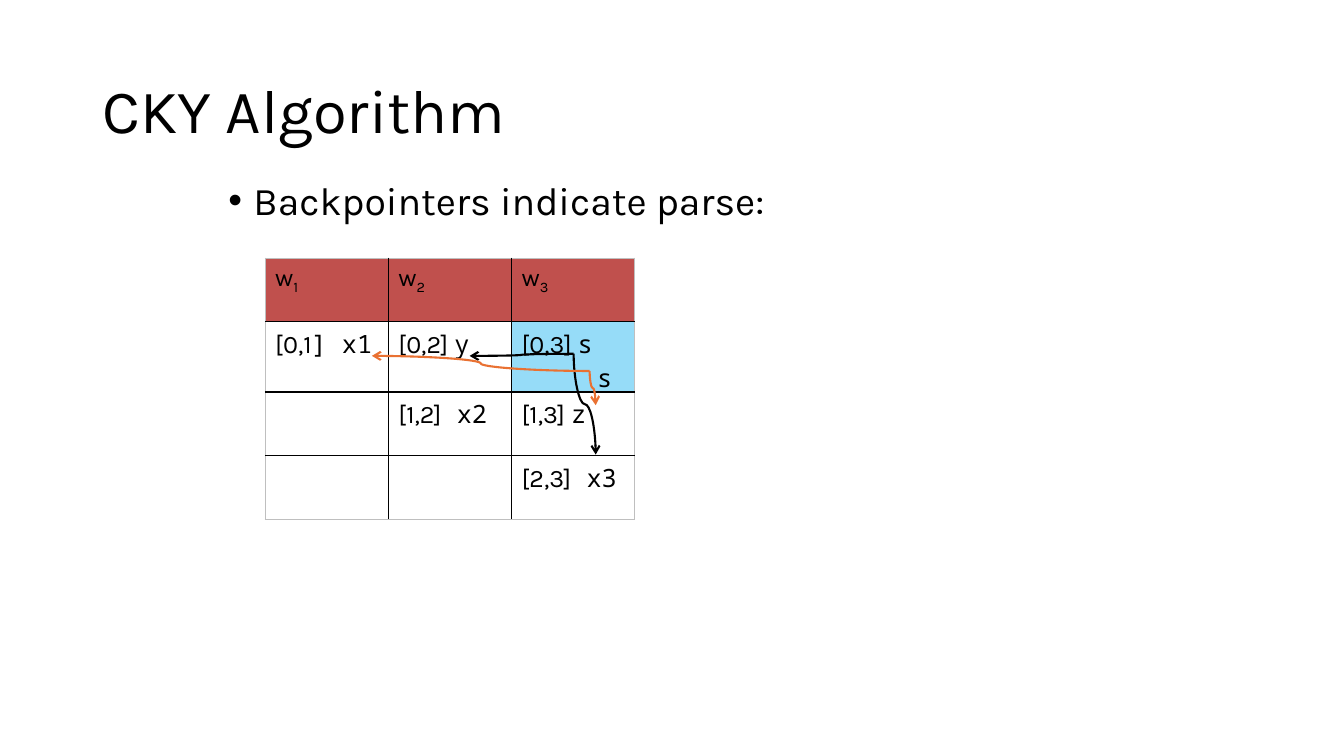
from dataclasses import dataclass

from lxml.etree import SubElement
from pptx import Presentation
from pptx.dml.color import RGBColor
from pptx.enum.shapes import MSO_CONNECTOR
from pptx.enum.text import MSO_ANCHOR
from pptx.oxml.ns import qn
from pptx.util import Pt


@dataclass(frozen=True)
class Theme:
    ink: str = "000000"
    paper: str = "FFFFFF"
    header: str = "C0504D"
    goal: str = "96DCF8"
    second_parse: str = "E97132"
    edge: str = "BFBFBF"
    sans: str = "Karla"
    mono: str = "Noto Sans Mono"
    title: int = 44
    body: int = 28
    cell: int = 18


THEME = Theme()

# Each cell holds a span or word in sans, then its symbols in mono.
CHART = [
    [("[0,1", "] x1"), ("[0,2] ", "y"), ("[0,3] ", "s")],
    [None, ("[1,2]", " x2"), ("[1,3] ", "z")],
    [None, None, ("[2,3]", " x3")],
]
TABLE_LEFT, TABLE_TOP, COL_WIDTH, ROW_HEIGHT = 189.36, 184.3, 88, 45.3

FIRST_S, SECOND_S = (409.7, 252.7), (421.2, 265)
# start, end, colour, whether the curve leaves its start vertically
BACKPOINTERS = [
    (FIRST_S, (335.5, 254.2), THEME.ink, False),
    (FIRST_S, (425.5, 324.7), THEME.ink, True),
    (SECOND_S, (265.7, 254.2), THEME.second_parse, False),
    (SECOND_S, (425.5, 289.4), THEME.second_parse, True),
]


def rgb(value):
    return RGBColor.from_string(value)


def add_text(p, text, size=THEME.cell, font=THEME.sans, color=THEME.ink, baseline=None):
    r = p.add_run()
    r.text = text
    r.font.size = Pt(size)
    r.font.name = font
    r.font.color.rgb = rgb(color)
    if baseline:
        r.font._element.set("baseline", str(baseline * 1000))
    return r


def indent(p, left, first=0):
    pPr = p._p.get_or_add_pPr()
    pPr.set("marL", str(Pt(left)))
    pPr.set("indent", str(Pt(first)))
    return pPr


def add_text_box(s, left, top, width, height, anchor=MSO_ANCHOR.TOP):
    """Return the first paragraph of a new wrapping text box."""
    tf = s.shapes.add_textbox(Pt(left), Pt(top), Pt(width), Pt(height)).text_frame
    tf.word_wrap = True
    tf.vertical_anchor = anchor
    p = tf.paragraphs[0]
    p.line_spacing = 0.9
    return p


def add_title(s, text):
    p = add_text_box(s, 66, 28.8, 828, 104.4, MSO_ANCHOR.MIDDLE)
    add_text(p, text, size=THEME.title)


def add_bullet(s, text):
    p = add_text_box(s, 156, 126, 648, 53.3)
    p.space_before = Pt(10)
    pPr = indent(p, 18, -18)
    SubElement(pPr, qn("a:buFont"), typeface="Arial")
    SubElement(pPr, qn("a:buChar"), char="•")
    add_text(p, text, size=THEME.body)


def set_borders(cell, outer_sides):
    """Draw grey lines on the table's outer sides and black ones elsewhere."""
    tcPr = cell._tc.get_or_add_tcPr()
    for i, side in enumerate("LRTB"):
        outer = side in outer_sides
        ln = tcPr.makeelement(qn(f"a:ln{side}"), {"w": str(Pt(0.5 if outer else 1))})
        fill = SubElement(ln, qn("a:solidFill"))
        SubElement(fill, qn("a:srgbClr"), val=THEME.edge if outer else THEME.ink)
        tcPr.insert(i, ln)


def fill_cell(cell, color):
    cell.fill.solid()
    cell.fill.fore_color.rgb = rgb(color)


def add_chart_table(s):
    rows, cols = len(CHART) + 1, len(CHART[0])
    frame = s.shapes.add_table(rows, cols, Pt(TABLE_LEFT), Pt(TABLE_TOP),
                               Pt(cols * COL_WIDTH), Pt(rows * ROW_HEIGHT))
    table = frame.table
    table.first_row = table.horz_banding = False
    for col in table.columns:
        col.width = Pt(COL_WIDTH)
    for row in table.rows:
        row.height = Pt(ROW_HEIGHT)

    for j in range(cols):
        cell = table.cell(0, j)
        p = cell.text_frame.paragraphs[0]
        add_text(p, "w")
        add_text(p, str(j + 1), baseline=-25)
        fill_cell(cell, THEME.header)

    for i, entries in enumerate(CHART, start=1):
        for j, entry in enumerate(entries):
            cell = table.cell(i, j)
            fill_cell(cell, THEME.paper)
            if entry:
                span, symbol = entry
                p = cell.text_frame.paragraphs[0]
                add_text(p, span)
                add_text(p, symbol, font=THEME.mono)

    goal = table.cell(1, cols - 1)
    fill_cell(goal, THEME.goal)
    p = goal.text_frame.add_paragraph()
    indent(p, 54)
    add_text(p, "s", font=THEME.mono)

    for i in range(rows):
        for j in range(cols):
            sides = {"L": j == 0, "R": j == cols - 1, "T": i == 0, "B": i == rows - 1}
            set_borders(table.cell(i, j), [side for side, outer in sides.items() if outer])


def add_backpointer(s, start, end, color, vertical):
    """Add a curved arrow; a vertical one is laid flat, then turned by 270 degrees."""
    (x1, y1), (x2, y2) = start, end
    if vertical:
        cx, cy = (x1 + x2) / 2, (y1 + y2) / 2
        dx, dy = (x2 - x1) / 2, (y2 - y1) / 2
        x1, y1, x2, y2 = cx + dy, cy - dx, cx - dy, cy + dx
    line = s.shapes.add_connector(MSO_CONNECTOR.CURVE, Pt(x1), Pt(y1), Pt(x2), Pt(y2))
    line.line.color.rgb = rgb(color)
    line.line.width = Pt(1.5)
    spPr = line._element.spPr
    if vertical:
        spPr.find(qn("a:xfrm")).set("rot", str(270 * 60000))
    SubElement(spPr.find(qn("a:ln")), qn("a:tailEnd"), type="arrow")
    SubElement(spPr, qn("a:effectLst"))


def main():
    prs = Presentation()
    prs.slide_width, prs.slide_height = Pt(960), Pt(540)
    s = prs.slides.add_slide(prs.slide_layouts[6])
    add_title(s, "CKY Algorithm")
    add_bullet(s, "Backpointers indicate parse:")
    add_chart_table(s)
    for backpointer in BACKPOINTERS:
        add_backpointer(s, *backpointer)
    prs.save("out.pptx")


if __name__ == "__main__":
    main()
